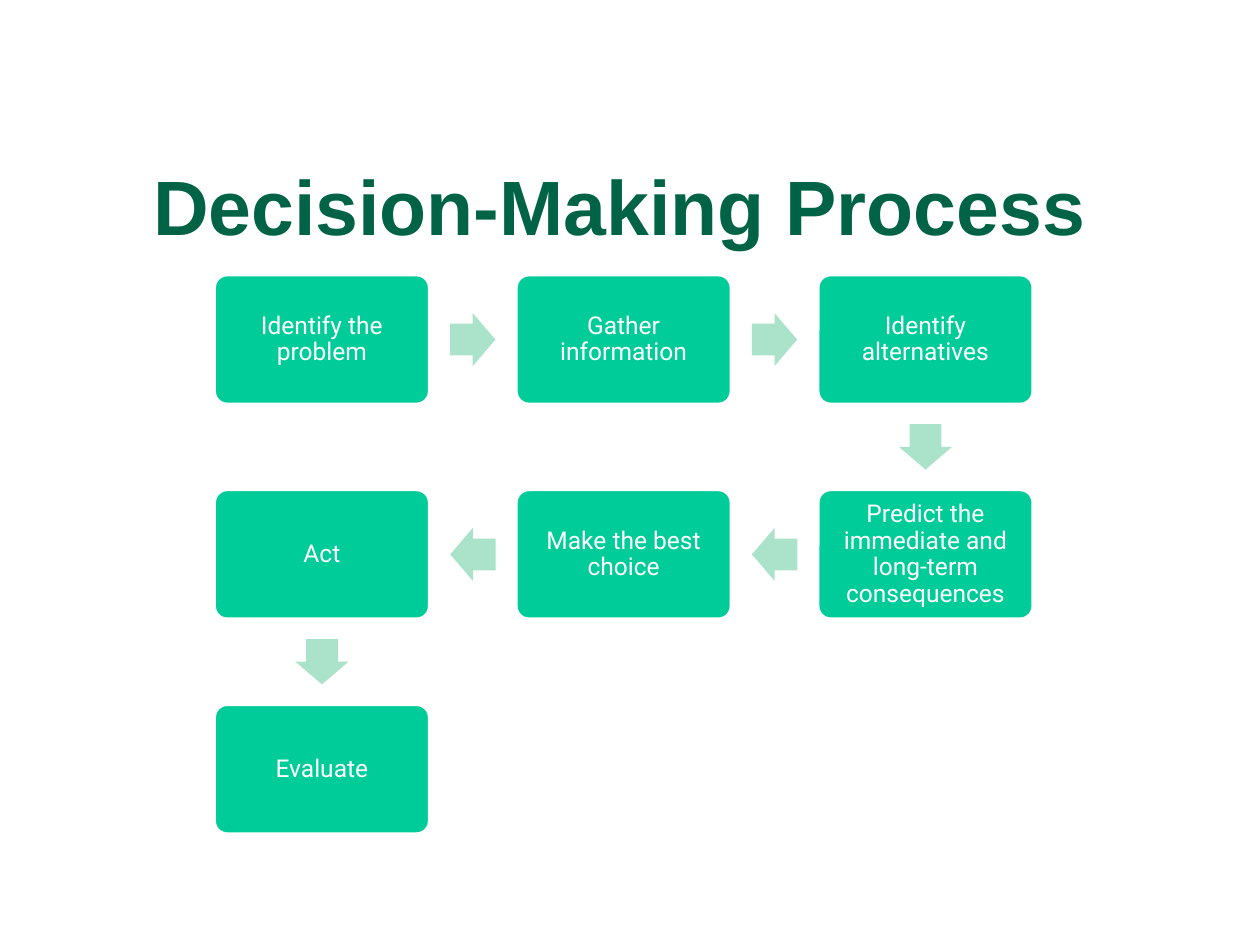
from math import atan2, degrees

from pptx import Presentation
from pptx.dml.color import RGBColor
from pptx.enum.shapes import MSO_SHAPE
from pptx.enum.text import MSO_ANCHOR, PP_ALIGN
from pptx.util import Inches, Pt

GREEN, PALE_GREEN, DARK_GREEN, WHITE = "00CC99", "ABE2CA", "006345", "FFFFFF"
STEP_W, STEP_H = 1.71, 1.03
ARROW_W, ARROW_H = 0.36, 0.42
# Step text with its column and row, in reading order of the process
STEPS = [
    ("Identify the problem", 0, 0),
    ("Gather information", 1, 0),
    ("Identify alternatives", 2, 0),
    ("Predict the immediate and long-term consequences", 2, 1),
    ("Make the best choice", 1, 1),
    ("Act", 0, 1),
    ("Evaluate", 0, 2),
]


def rgb(value):
    return RGBColor.from_string(value)


def set_text(shape, text, font, size, color, bold=False):
    tf = shape.text_frame
    tf.word_wrap = True
    tf.vertical_anchor = MSO_ANCHOR.MIDDLE
    tf.text = text
    p = tf.paragraphs[0]
    p.alignment = PP_ALIGN.CENTER
    f = p.runs[0].font
    f.name, f.size, f.bold = font, Pt(size), bold
    f.color.rgb = rgb(color)
    return tf


def add_title(slide, left, top, width, height):
    box = slide.shapes.add_textbox(Inches(left), Inches(top), Inches(width), Inches(height))
    set_text(box, "Decision-Making Process", "Arial", 44, DARK_GREEN, bold=True)


def add_filled(slide, kind, cx, cy, width, height, color):
    """Add a flat preset shape centred on (cx, cy)."""
    sp = slide.shapes.add_shape(kind, Inches(cx - width / 2), Inches(cy - height / 2),
                                Inches(width), Inches(height))
    sp.shadow.inherit = False
    sp.fill.solid()
    sp.fill.fore_color.rgb = rgb(color)
    return sp


def add_step(slide, text, cx, cy):
    sp = add_filled(slide, MSO_SHAPE.ROUNDED_RECTANGLE, cx, cy, STEP_W, STEP_H, GREEN)
    sp.adjustments[0] = 0.1
    sp.line.color.rgb = rgb(WHITE)
    sp.line.width = Pt(2)
    tf = set_text(sp, text, "Roboto", 14, WHITE)
    tf.margin_left = tf.margin_right = tf.margin_top = tf.margin_bottom = Inches(0.06)
    tf.paragraphs[0].line_spacing = 0.9


def add_arrow(slide, start, end):
    """Add an arrow halfway between two step centres, pointing to the second."""
    (x1, y1), (x2, y2) = start, end
    sp = add_filled(slide, MSO_SHAPE.RIGHT_ARROW, (x1 + x2) / 2, (y1 + y2) / 2,
                    ARROW_W, ARROW_H, PALE_GREEN)
    sp.adjustments[0] = 0.6
    sp.adjustments[1] = 0.5
    sp.line.fill.background()
    sp.rotation = degrees(atan2(y2 - y1, x2 - x1))


def add_process(slide, left, top, width, height):
    """Lay the steps on a 3 by 3 grid that fills the box, joined by arrows."""
    pitch_x, pitch_y = (width - STEP_W) / 2, (height - STEP_H) / 2
    centres = [(left + STEP_W / 2 + col * pitch_x, top + STEP_H / 2 + row * pitch_y)
               for _, col, row in STEPS]
    for (text, _, _), (cx, cy) in zip(STEPS, centres):
        add_step(slide, text, cx, cy)
    for start, end in zip(centres, centres[1:]):
        add_arrow(slide, start, end)


def main():
    prs = Presentation()
    prs.slide_width, prs.slide_height = Inches(10), Inches(7.5)
    slide = prs.slides.add_slide(prs.slide_layouts[6])
    add_title(slide, 0.67, 1, 8.5, 1.25)
    add_process(slide, 1.7, 2.18, 6.5, 4.44)
    prs.save("out.pptx")


if __name__ == "__main__":
    main()
